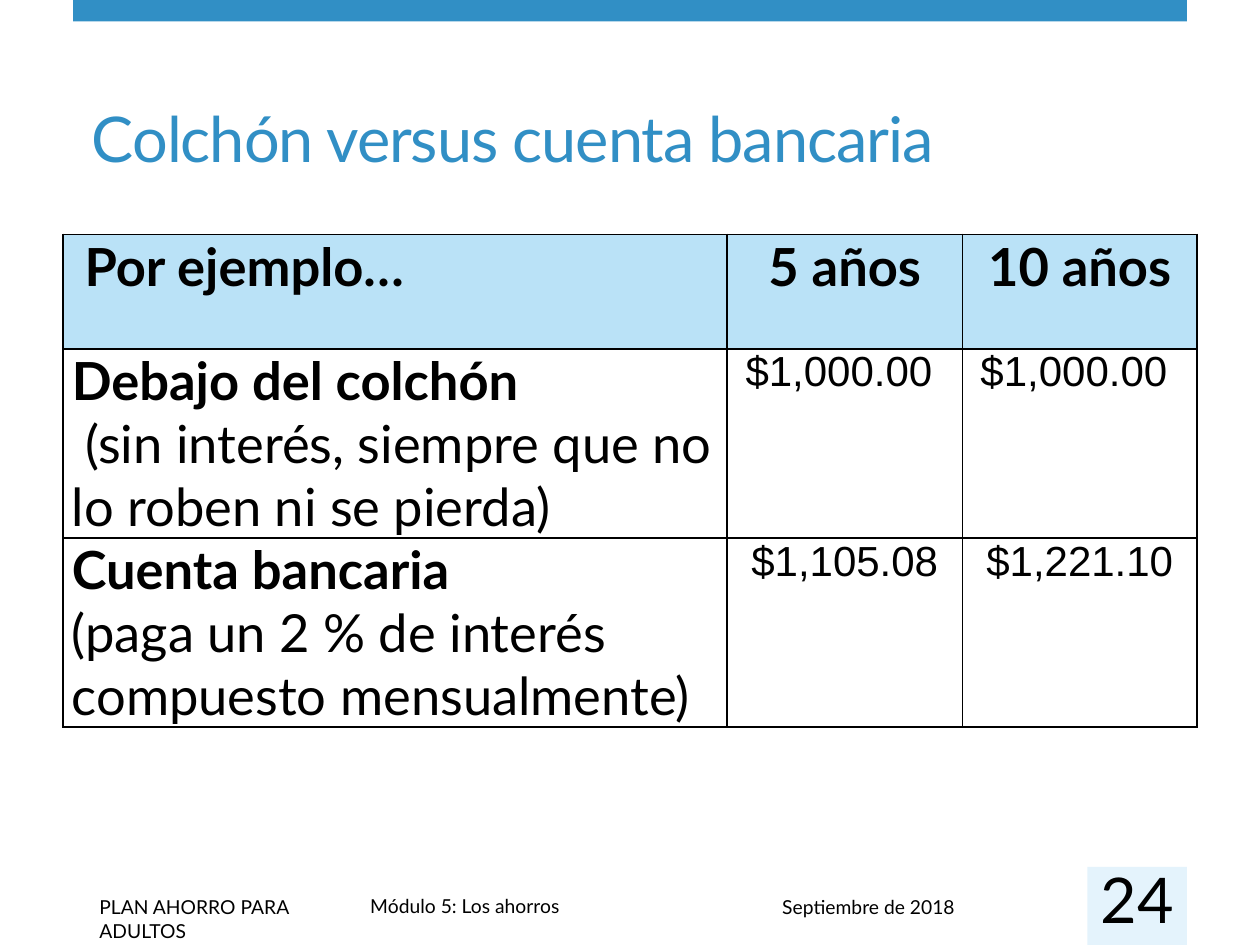
"""Build the slide comparing savings under the mattress with a bank account."""
from lxml import etree
from pptx import Presentation
from pptx.dml.color import RGBColor
from pptx.enum.shapes import MSO_SHAPE
from pptx.enum.text import MSO_ANCHOR, MSO_AUTO_SIZE, PP_ALIGN
from pptx.oxml.ns import qn
from pptx.util import Inches, Pt

LEFT, CENTER = PP_ALIGN.LEFT, PP_ALIGN.CENTER
TOP, BOTTOM = MSO_ANCHOR.TOP, MSO_ANCHOR.BOTTOM
RECTANGLE, NO_AUTOFIT = MSO_SHAPE.RECTANGLE, MSO_AUTO_SIZE.NONE
TITLE_ONLY = 5

THEME = {
    "accent": "318FC5", "number_fill": "E4F3FC", "header_fill": "BAE2F7", "ink": "000000",
    "font": "Lato", "amount_font": "Arial",
    "title": 36, "label": 30, "amount": 24, "footer": 11, "number": 36,
}

TITLE = "Colchón versus cuenta bancaria"
HEADERS = ["\u00a0Por ejemplo…", "5 años", "10 años"]
SAVINGS = [
    ("Debajo del colchón", " (sin interés, siempre que no lo roben ni se pierda)",
     ["$1,000.00 ", "$1,000.00 "]),
    ("Cuenta bancaria", "(paga un 2 % de interés compuesto mensualmente)",
     ["$1,105.08", "$1,221.10"]),
]
COLUMN_WIDTHS = [5.27, 1.87, 1.86]
ROW_HEIGHTS = [0.91, 1.5, 1.5]
TABLE_LEFT, TABLE_TOP, CELL_INSET = 0.5, 1.86, 0.07
FOOTERS = [
    ("PLAN AHORRO PARA ADULTOS", (0.69, 7.06, 2.09, 0.29)),
    ("Módulo 5: Los ahorros", (2.84, 7.05, 3.2, 0.29)),
    ("Septiembre de 2018", (6.11, 7.06, 2.52, 0.29)),
]
PAGE_NUMBER = "24"
TITLE_BOX = (0.63, 0.48, 8.2, 0.96)
NUMBER_BOX = (8.63, 6.83, 0.79, 0.45)
BANDS = [("accent", (0.58, 0, 8.84, 0.17)), ("number_fill", (8.63, 6.88, 0.79, 0.62))]


def inches(box):
    """Convert a box to lengths."""
    return [Inches(length) for length in box]


def write(paragraph, text, size="label", font="font", color="ink", bold=False,
          align=LEFT, spacing=None):
    """Add formatted text to a paragraph."""
    paragraph.alignment = align
    run = paragraph.add_run()
    run.text = text
    run.font.size = Pt(THEME[size])
    run.font.name = THEME[font]
    run.font.bold = bold
    run.font.color.rgb = RGBColor.from_string(THEME[color])
    if spacing is not None:
        run.font._element.set("spc", str(spacing))


def add_band(slide, color, box):
    """Add a plain filled rectangle."""
    band = slide.shapes.add_shape(RECTANGLE, *inches(box))
    band.shadow.inherit = False
    band.fill.solid()
    band.fill.fore_color.rgb = RGBColor.from_string(THEME[color])
    band.line.fill.background()


def add_label(slide, text, box, inset=None, **style):
    """Add a wrapping text box."""
    frame = slide.shapes.add_textbox(*inches(box)).text_frame
    frame.word_wrap = True
    if inset is not None:
        frame.margin_left = frame.margin_right = Inches(inset)
        frame.margin_top = frame.margin_bottom = Inches(inset)
    write(frame.paragraphs[0], text, **style)


def style_cell(cell, fill=None):
    """Set the borders, insets and fill of a cell."""
    properties = cell._tc.get_or_add_tcPr()
    for side in ("a:lnL", "a:lnR", "a:lnT", "a:lnB"):
        border = etree.SubElement(properties, qn(side), w=str(Pt(1)))
        solid = etree.SubElement(border, qn("a:solidFill"))
        etree.SubElement(solid, qn("a:srgbClr"), val=THEME["ink"])
    cell.margin_left = cell.margin_right = Inches(CELL_INSET)
    cell.margin_top = cell.margin_bottom = 0
    cell.vertical_anchor = TOP
    if fill:
        cell.fill.solid()
        cell.fill.fore_color.rgb = RGBColor.from_string(THEME[fill])
    else:
        cell.fill.background()


def add_savings_table(slide):
    """Add the comparison table."""
    box = (TABLE_LEFT, TABLE_TOP, sum(COLUMN_WIDTHS), sum(ROW_HEIGHTS))
    table = slide.shapes.add_table(len(ROW_HEIGHTS), len(COLUMN_WIDTHS), *inches(box)).table
    table.horz_banding = False
    for column, width in zip(table.columns, COLUMN_WIDTHS):
        column.width = Inches(width)
    for row, height in zip(table.rows, ROW_HEIGHTS):
        row.height = Inches(height)

    for index, header in enumerate(HEADERS):
        cell = table.cell(0, index)
        style_cell(cell, fill="header_fill")
        write(cell.text_frame.paragraphs[0], header, bold=True,
              align=CENTER if index else LEFT)

    for row_index, (place, detail, amounts) in enumerate(SAVINGS, 1):
        cell = table.cell(row_index, 0)
        style_cell(cell)
        paragraph = cell.text_frame.paragraphs[0]
        write(paragraph, place, bold=True)
        paragraph.add_line_break()
        write(paragraph, detail)
        for column_index, amount in enumerate(amounts, 1):
            cell = table.cell(row_index, column_index)
            style_cell(cell)
            write(cell.text_frame.paragraphs[0], amount, size="amount",
                  font="amount_font", align=CENTER)


def main():
    """Build and save the presentation."""
    deck = Presentation()
    deck.slide_width, deck.slide_height = Inches(10), Inches(7.5)
    slide = deck.slides.add_slide(deck.slide_layouts[TITLE_ONLY])

    for color, box in BANDS:
        add_band(slide, color, box)
    for text, box in FOOTERS:
        add_label(slide, text, box, size="footer")

    title = slide.shapes.title
    title.left, title.top, title.width, title.height = inches(TITLE_BOX)
    title.text_frame.auto_size = NO_AUTOFIT
    title.text_frame.vertical_anchor = BOTTOM
    write(title.text_frame.paragraphs[0], TITLE, size="title", color="accent", spacing=-60)

    add_savings_table(slide)
    add_label(slide, PAGE_NUMBER, NUMBER_BOX, inset=0, size="number", align=CENTER)
    deck.save("out.pptx")


if __name__ == "__main__":
    main()
